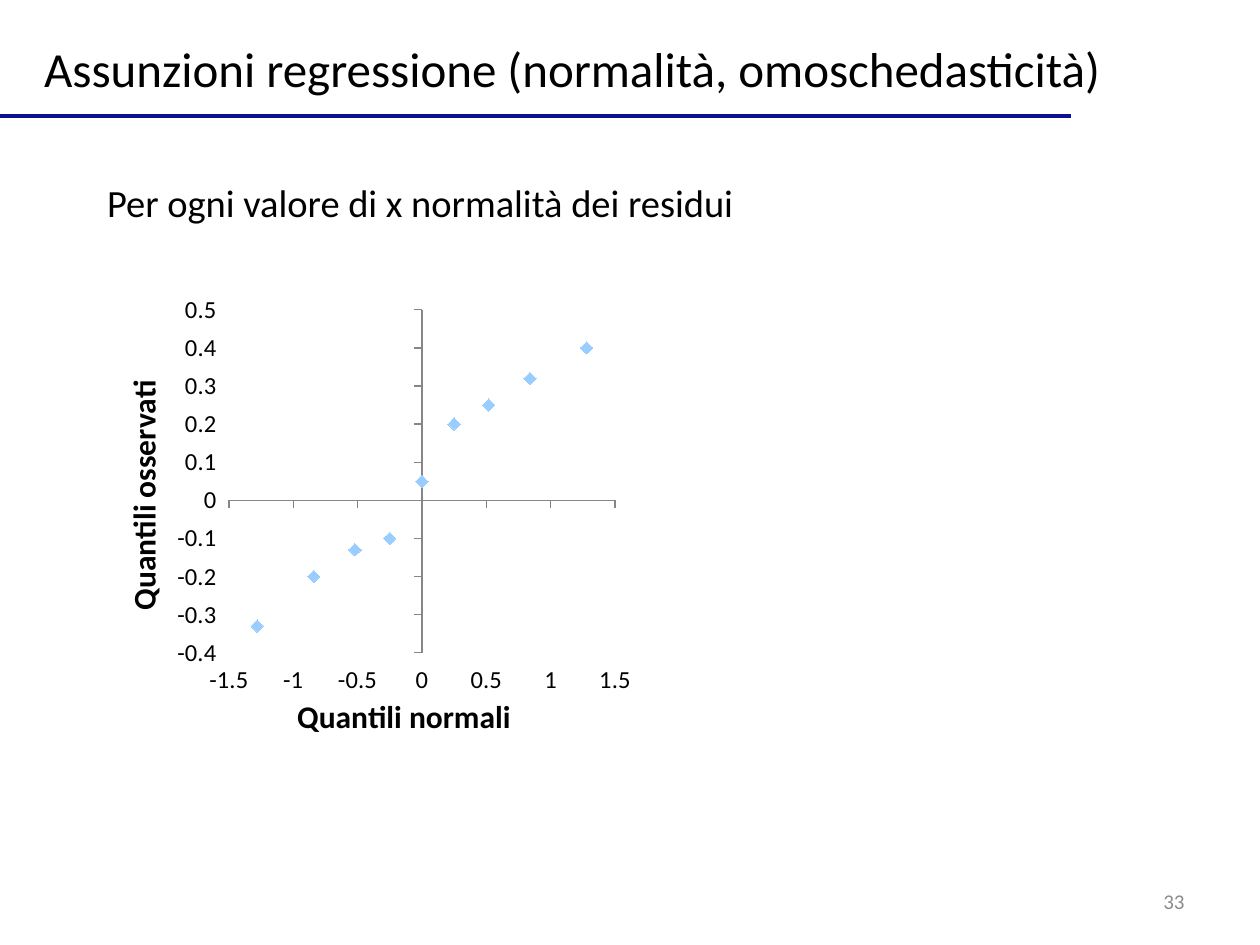
from lxml import etree
from pptx import Presentation
from pptx.chart.data import XyChartData
from pptx.dml.color import RGBColor
from pptx.enum.chart import XL_CHART_TYPE, XL_MARKER_STYLE, XL_TICK_LABEL_POSITION, XL_TICK_MARK
from pptx.enum.shapes import MSO_CONNECTOR
from pptx.enum.text import MSO_ANCHOR, PP_ALIGN
from pptx.oxml import parse_xml
from pptx.oxml.ns import nsdecls, qn
from pptx.util import Inches, Pt

SCATTER = XL_CHART_TYPE.XY_SCATTER
DIAMOND = XL_MARKER_STYLE.DIAMOND
LOW = XL_TICK_LABEL_POSITION.LOW
OUTSIDE = XL_TICK_MARK.OUTSIDE
STRAIGHT = MSO_CONNECTOR.STRAIGHT
TOP, MIDDLE = MSO_ANCHOR.TOP, MSO_ANCHOR.MIDDLE
LEFT, RIGHT = PP_ALIGN.LEFT, PP_ALIGN.RIGHT

FONT = "Calibri"
COLOURS = {"text": "000000", "number": "8C8C8C", "rule": "0C1290",
           "marker": "99CCFF", "axis": "868686"}
QUANTILES = [(-1.28, -0.33), (-0.84, -0.2), (-0.52, -0.13), (-0.25, -0.1), (0, 0.05),
             (0.25, 0.2), (0.52, 0.25), (0.84, 0.32), (1.28, 0.4)]
PLOT_AREA = {"x": 0.215, "y": 0.057, "w": 0.735, "h": 0.742}


class SlideBuilder:
    def __init__(self, page):
        self.page = page

    def colour(self, name):
        return RGBColor.from_string(COLOURS[name])

    def style_font(self, font, size, colour="text", bold=False):
        font.name = FONT
        font.size = Pt(size)
        font.bold = bold
        font.color.rgb = self.colour(colour)

    def fill_text(self, box, text, place, size, colour="text", align=LEFT, anchor=MIDDLE, wrap=True):
        box.left, box.top, box.width, box.height = map(Inches, place)
        frame = box.text_frame
        frame.text = text
        frame.word_wrap = wrap
        frame.vertical_anchor = anchor
        para = frame.paragraphs[0]
        para.alignment = align
        para.space_before = Pt(0)
        self.style_font(para.runs[0].font, size, colour)
        return para

    def title(self, text, place, size):
        self.fill_text(self.page.shapes.title, text, place, size, wrap=False)

    def body(self, text, place, size):
        para = self.fill_text(self.page.placeholders[1], text, place, size, anchor=TOP)
        properties = para._p.get_or_add_pPr()
        properties.set("marL", "0")
        properties.set("indent", "0")
        etree.SubElement(properties, qn("a:buNone"))

    def page_number(self, text, place, size):
        box = self.page.shapes.add_textbox(*map(Inches, place))
        self.fill_text(box, text, place, size, "number", RIGHT)

    def rule(self, start, end, width):
        line = self.page.shapes.add_connector(STRAIGHT, *map(Inches, start + end))
        line.line.color.rgb = self.colour("rule")
        line.line.width = Pt(width)
        etree.SubElement(line._element.spPr, qn("a:effectLst"))

    def axis(self, axis, title, low, high, step):
        axis.minimum_scale, axis.maximum_scale, axis.major_unit = low, high, step
        axis.has_major_gridlines = False
        axis.major_tick_mark = OUTSIDE
        axis.tick_label_position = LOW
        axis.tick_labels.number_format = "General"
        axis.tick_labels.number_format_is_linked = False
        axis.format.line.color.rgb = self.colour("axis")
        axis.format.line.width = Pt(0.75)
        self.style_font(axis.tick_labels.font, 14)
        frame = axis.axis_title.text_frame
        frame.text = title
        self.style_font(frame.paragraphs[0].runs[0].font, 18, bold=True)

    def scatter(self, points, place):
        data = XyChartData()
        series = data.add_series("Series 1")
        for x, y in points:
            series.add_data_point(x, y)
        chart = self.page.shapes.add_chart(SCATTER, *map(Inches, place), data).chart
        chart.has_legend = False
        chart.has_title = False
        self.style_font(chart.font, 18)
        plot = chart.plots[0]
        plot.vary_by_categories = False
        dots = plot.series[0]
        dots.smooth = False
        dots.format.line.fill.background()
        dots.marker.style = DIAMOND
        dots.marker.size = 7
        dots.marker.format.fill.solid()
        dots.marker.format.fill.fore_color.rgb = self.colour("marker")
        dots.marker.format.line.fill.background()
        self.axis(chart.category_axis, "Quantili normali", -1.5, 1.5, 0.5)
        self.axis(chart.value_axis, "Quantili osservati", -0.4, 0.5, 0.1)
        self.plot_layout(chart)

    def plot_layout(self, chart):
        area = chart._chartSpace.find(".//" + qn("c:plotArea"))
        for old in area.findall(qn("c:layout")):
            area.remove(old)
        sizes = "".join(f'<c:{key} val="{value}"/>' for key, value in PLOT_AREA.items())
        area.insert(0, parse_xml(
            f'<c:layout {nsdecls("c")}><c:manualLayout><c:layoutTarget val="inner"/>'
            f'<c:xMode val="edge"/><c:yMode val="edge"/>{sizes}</c:manualLayout></c:layout>'))


def main():
    deck = Presentation()
    deck.slide_width, deck.slide_height = Inches(10), Inches(7.5)
    slide = SlideBuilder(deck.slides.add_slide(deck.slide_layouts[1]))
    slide.title("Assunzioni regressione (normalità, omoschedasticità)", (0.25, 0.25, 8.68, 0.57), 28)
    slide.rule((0, 0.92), (8.5, 0.92), 2)
    slide.body("Per ogni valore di x normalità dei residui", (0.75, 1.37, 8.5, 0.84), 22)
    slide.scatter(QUANTILES, (0.92, 2.25, 4.17, 3.67))
    slide.page_number("33", (7.17, 6.95, 2.33, 0.4), 12)
    deck.save("out.pptx")


if __name__ == "__main__":
    main()
